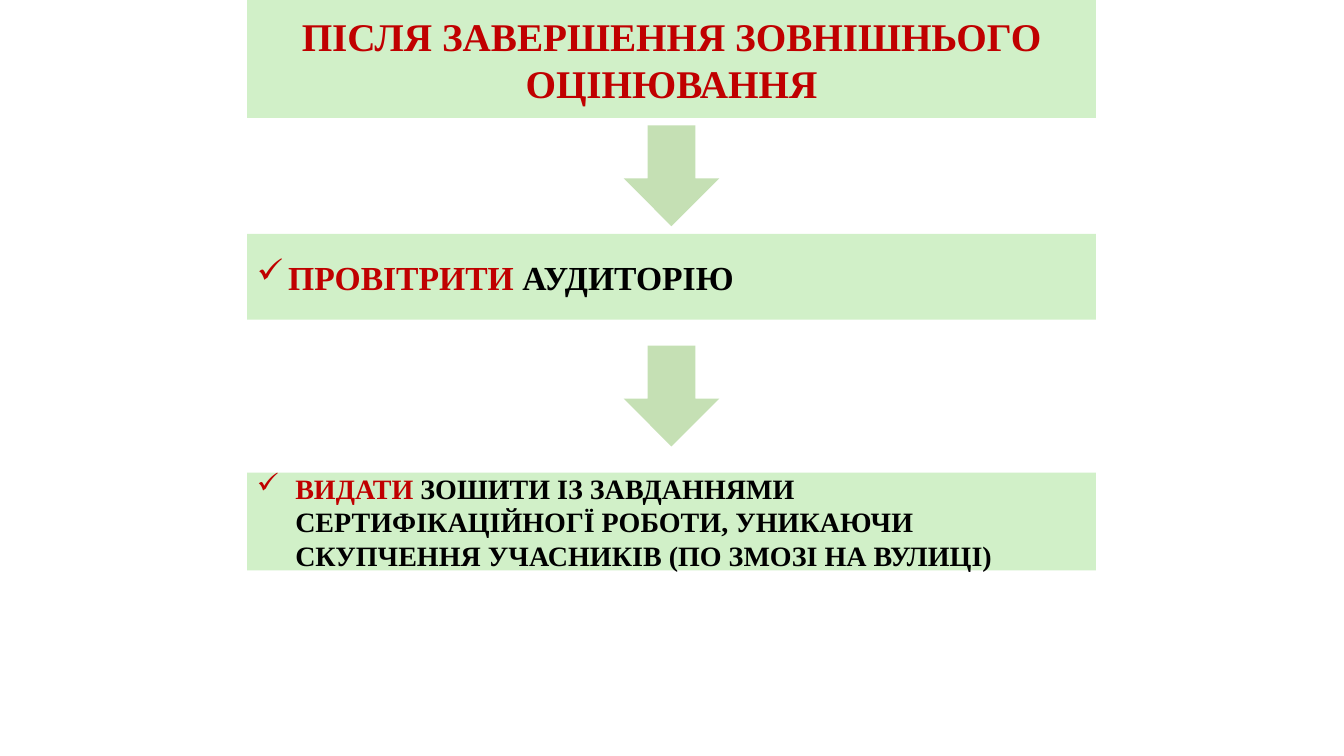
import pptx
import pptx.util
import pptx.dml.color
import pptx.enum.shapes
import pptx.enum.text
from lxml import etree

Inches = pptx.util.Inches
SHAPE = pptx.enum.shapes.MSO_SHAPE
ALIGN = pptx.enum.text.PP_ALIGN

RED, BLACK = "C00000", "000000"
PALE, GREEN = "D1F0C8", "C5E0B4"
LEFT, WIDTH = 2.45, 8.42
ARROW_W, ARROW_H = 0.95, 1

# top, height, text size, bullet indent, runs
BOXES = [
    (0, 1.17, 28, 0, [("ПІСЛЯ ЗАВЕРШЕННЯ ЗОВНІШНЬОГО ОЦІНЮВАННЯ", RED)]),
    (2.32, 0.85, 24, 0.31, [("ПРОВІТРИТИ", RED), (" АУДИТОРІЮ", BLACK)]),
    (4.69, 0.97, 20, 0.38, [
        ("ВИДАТИ ", RED),
        ("ЗОШИТИ ІЗ ЗАВДАННЯМИ СЕРТИФІКАЦІЙНОГЇ РОБОТИ, УНИКАЮЧИ "
         "СКУПЧЕННЯ УЧАСНИКІВ (ПО ЗМОЗІ НА ВУЛИЦІ)", BLACK)]),
]


def color(text):
    return pptx.dml.color.RGBColor.from_string(text)


def add_block(kind, left, top, width, height, fill):
    block = slide.shapes.add_shape(
        kind, Inches(left), Inches(top), Inches(width), Inches(height))
    block.shadow.inherit = False
    block.fill.solid()
    block.fill.fore_color.rgb = color(fill)
    block.line.fill.background()
    return block


def add_check(para, indent):
    """Give the paragraph a red check-mark bullet with a hanging indent."""
    props = para._p.get_or_add_pPr()
    props.set("marL", str(Inches(indent)))
    props.set("indent", str(-Inches(indent)))
    space = "{http://schemas.openxmlformats.org/drawingml/2006/main}"
    tint = etree.SubElement(props, space + "buClr")
    etree.SubElement(tint, space + "srgbClr", val=RED)
    etree.SubElement(props, space + "buChar", char="✓")


def add_text(box, size, indent, runs):
    frame = box.text_frame
    frame.word_wrap = True
    frame.vertical_anchor = pptx.enum.text.MSO_ANCHOR.MIDDLE
    para = frame.paragraphs[0]
    para.alignment = ALIGN.LEFT if indent else ALIGN.CENTER
    if indent:
        add_check(para, indent)
    para.font.name = "Times New Roman"
    para.font.size = pptx.util.Pt(size)
    para.font.bold = True
    for text, tint in runs:
        run = para.add_run()
        run.text = text
        run.font.color.rgb = color(tint)


deck = pptx.Presentation()
deck.slide_width, deck.slide_height = Inches(13.33), Inches(7.5)
slide = deck.slides.add_slide(deck.slide_layouts[6])

for top, height, size, indent, runs in BOXES:
    box = add_block(SHAPE.RECTANGLE, LEFT, top, WIDTH, height, PALE)
    add_text(box, size, indent, runs)

# Each arrow sits midway in the gap between two boxes
for upper, lower in zip(BOXES, BOXES[1:]):
    middle = (upper[0] + upper[1] + lower[0]) / 2
    add_block(SHAPE.DOWN_ARROW, LEFT + (WIDTH - ARROW_W) / 2,
              middle - ARROW_H / 2, ARROW_W, ARROW_H, GREEN)

deck.save("out.pptx")
